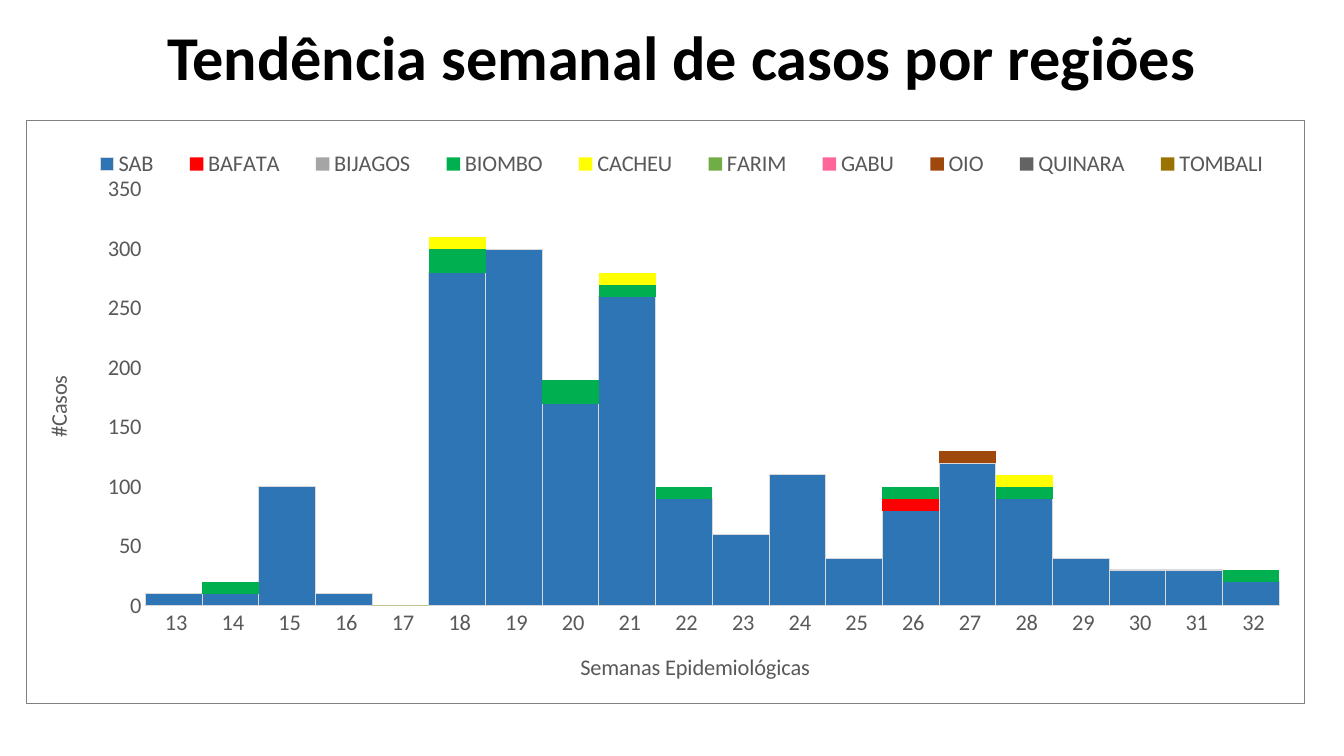
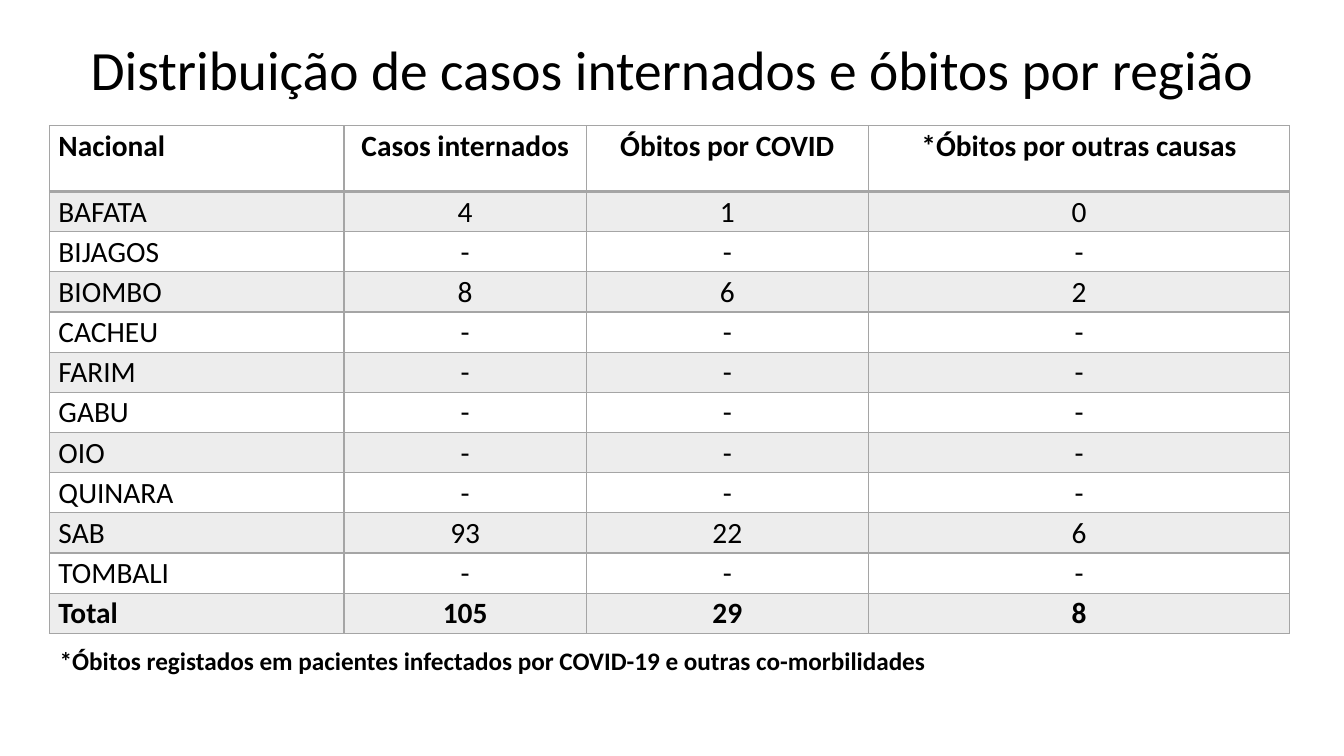
from dataclasses import dataclass

from lxml import etree
from pptx import Presentation
from pptx import util as u
from pptx.chart.data import CategoryChartData
from pptx.dml.color import RGBColor
from pptx.enum import chart as charts, text
from pptx.oxml.ns import qn

Pt = u.Pt


@dataclass(frozen=True)
class Theme:
    font: str = "Calibri"
    ink: str = "000000"
    soft_ink: str = "595959"
    frame: str = "808080"
    axis_line: str = "D9D9D9"
    grid: str = "A5A5A5"
    band: str = "EDEDED"
    chart_size: float = 16
    table_size: float = 21
    note_size: float = 18


THEME = Theme()

# Weekly cases to the nearest ten: region, colour, cases by week
WEEKS = range(13, 33)


def by_week(cases, zero_weeks=()):
    return {**dict.fromkeys(zero_weeks, 0), **cases}


REGIONS = [
    ("SAB", "2E75B6", dict(zip(WEEKS, [
        10, 10, 100, 10, 0, 280, 300, 170, 260, 90,
        60, 110, 40, 80, 120, 90, 40, 30, 30, 20]))),
    ("BAFATA", "FF0000", by_week({26: 10}, (20, 22, 24, 27, 29, 30, 31, 32))),
    ("BIJAGOS", "A5A5A5", {}),
    ("BIOMBO", "00B050", by_week(
        {14: 10, 18: 20, 20: 20, 21: 10, 22: 10, 26: 10, 28: 10, 32: 10},
        (13, 16, 17, 19, 23, 24, 25, 27, 29, 30, 31))),
    ("CACHEU", "FFFF00", by_week(
        {18: 10, 21: 10, 28: 10},
        (17, 20, 22, 23, 24, 27, 29, 30, 31, 32))),
    ("FARIM", "70AD47", by_week({}, (22,))),
    ("GABU", "FF6699", by_week({}, (18, 19, 24, *range(26, 33)))),
    ("OIO", "9E480E", by_week(
        {27: 10}, (17, 23, 24, 25, 26, 28, 29, 30, 31))),
    ("QUINARA", "636363", by_week({}, (18, 28))),
    ("TOMBALI", "997300", by_week({}, (27, 28, 29, 31))),
]

# Admissions and deaths by region
HEADINGS = ["Nacional", "Casos internados", "Óbitos por COVID",
            "*Óbitos por outras causas"]
COUNTS = {"BAFATA": (4, 1, 0), "BIOMBO": (8, 6, 2), "SAB": (93, 22, 6)}
TOTAL = ["Total", 105, 29, 8]


def rgb(colour):
    return RGBColor.from_string(colour)


def set_layout(holder, target=None, **edges):
    """Place a chart part by fractions of the chart frame."""
    layout = holder.find(qn("c:layout"))
    if layout is None:
        layout = etree.Element(qn("c:layout"))
        holder.insert(0 if target else 1, layout)
    manual = etree.SubElement(layout, qn("c:manualLayout"))
    values = {"layoutTarget": target} if target else {}
    values.update(xMode="edge", yMode="edge", **edges)
    for name, value in values.items():
        etree.SubElement(manual, qn("c:" + name)).set("val", str(value))


def add_line(parent, tag, colour, width):
    line = etree.SubElement(parent, qn(tag), w=str(Pt(width)))
    fill = etree.SubElement(line, qn("a:solidFill"))
    etree.SubElement(fill, qn("a:srgbClr"), val=colour)


class Deck:
    def __init__(self, theme):
        self.theme = theme
        self.deck = Presentation()
        self.deck.slide_width, self.deck.slide_height = Pt(960), Pt(540)
        self.page = None

    def style(self, font, size, colour=None, bold=False):
        font.name, font.size, font.bold = self.theme.font, Pt(size), bold
        font.color.rgb = rgb(colour or self.theme.ink)

    def add_page(self, title, box, size, anchor, spacing, bold=False):
        self.page = self.deck.slides.add_slide(self.deck.slide_layouts[5])
        holder = self.page.shapes.title
        holder.left, holder.top, holder.width, holder.height = map(Pt, box)
        frame = holder.text_frame
        frame.text = title
        frame.auto_size = text.MSO_AUTO_SIZE.NONE
        frame.vertical_anchor = anchor
        para = frame.paragraphs[0]
        para.alignment = text.PP_ALIGN.CENTER
        para.line_spacing = spacing
        self.style(para.font, size, bold=bold)

    def add_note(self, note, box):
        frame = self.page.shapes.add_textbox(*map(Pt, box)).text_frame
        frame.word_wrap = True
        frame.text = note
        self.style(frame.paragraphs[0].font, self.theme.note_size, bold=True)

    def add_axis(self, axis, title, x, y):
        axis.has_major_gridlines = False
        axis.major_tick_mark = charts.XL_TICK_MARK.NONE
        self.style(axis.tick_labels.font, self.theme.chart_size,
                   self.theme.soft_ink)
        frame = axis.axis_title.text_frame
        frame.text = title
        self.style(frame.paragraphs[0].font, self.theme.chart_size,
                   self.theme.soft_ink)
        set_layout(axis.axis_title.element, x=x, y=y)

    def add_stacked_columns(self, categories, regions, box):
        theme = self.theme
        data = CategoryChartData()
        data.categories = [f" {name}" for name in categories]
        for name, _, cases in regions:
            data.add_series(name, [cases.get(key) for key in categories])
        chart = self.page.shapes.add_chart(
            charts.XL_CHART_TYPE.COLUMN_STACKED, *map(Pt, box), data).chart
        chart.has_title = False
        self.style(chart.font, theme.chart_size)

        # Frame and plot area
        frame = etree.Element(qn("c:spPr"))
        add_line(frame, "a:ln", theme.frame, 0.75)
        chart.element.find(qn("c:chart")).addnext(frame)
        set_layout(chart.element.find(".//" + qn("c:plotArea")), "inner",
                   x=0.093, y=0.118, w=0.887, h=0.714)

        # Columns
        plot = chart.plots[0]
        plot.gap_width, plot.overlap = 0, 100
        plot.vary_by_categories = False
        for series, (_, colour, _) in zip(plot.series, regions):
            series.format.fill.solid()
            series.format.fill.fore_color.rgb = rgb(colour)
        border = plot.series[0].format.line
        border.color.rgb, border.width = rgb(theme.axis_line), Pt(0.75)

        # Axes
        weeks, cases = chart.category_axis, chart.value_axis
        self.add_axis(weeks, "Semanas Epidemiológicas", 0.43, 0.905)
        self.add_axis(cases, "#Casos", 0.01, 0.43)
        weeks.format.line.color.rgb = rgb(theme.axis_line)
        weeks.format.line.width = Pt(0.75)
        cases.format.line.fill.background()
        cases.minimum_scale, cases.maximum_scale = 0, 350
        cases.major_unit = 50
        body = cases.axis_title.element.find(".//" + qn("a:bodyPr"))
        body.set("rot", "-5400000")
        body.set("vert", "horz")

        # Legend
        chart.has_legend = True
        legend = chart.legend
        legend.position = charts.XL_LEGEND_POSITION.TOP
        legend.include_in_layout = False
        self.style(legend.font, theme.chart_size, theme.soft_ink)
        set_layout(chart.element.find(".//" + qn("c:legend")),
                   x=0.035, y=0.044, w=0.955, h=0.06)

    def add_table(self, rows, left, top, widths, heights):
        table = self.page.shapes.add_table(
            len(rows), len(widths), Pt(left), Pt(top),
            Pt(sum(widths)), Pt(sum(heights))).table
        table.first_row = table.horz_banding = False
        for column, width in zip(table.columns, widths):
            column.width = Pt(width)
        for i, values in enumerate(rows):
            table.rows[i].height = Pt(heights[i])
            for j, value in enumerate(values):
                self.fill_cell(table.cell(i, j), value, i, j,
                               bold=i in (0, len(rows) - 1))

    def fill_cell(self, cell, value, row, column, bold):
        cell.text = str(value)
        cell.margin_left = cell.margin_right = Pt(6.5)
        cell.margin_top = cell.margin_bottom = 0
        para = cell.text_frame.paragraphs[0]
        para.line_spacing = 1.07
        if column:
            para.alignment = text.PP_ALIGN.CENTER
        self.style(para.font, self.theme.table_size, bold=bold)
        # The rule under the heading row is heavier
        widths = {"L": 1, "R": 1, "T": 2.25 if row == 1 else 1,
                  "B": 2.25 if row == 0 else 1}
        for side, width in widths.items():
            add_line(cell._tc.get_or_add_tcPr(), "a:ln" + side,
                     self.theme.grid, width)
        if row % 2:
            cell.fill.solid()
            cell.fill.fore_color.rgb = rgb(self.theme.band)
        else:
            cell.fill.background()


def main():
    report = Deck(THEME)

    # Weekly trend
    report.add_page("Tendência semanal de casos por regiões",
                    (42, 18, 890, 50.5), 44.5, text.MSO_ANCHOR.BOTTOM,
                    0.7, bold=True)
    report.add_stacked_columns(WEEKS, REGIONS, (18.5, 86, 914, 417))

    # Admissions and deaths
    report.add_page("Distribuição de casos internados e óbitos por região",
                    (27.5, 25.5, 905, 52), 39.6, text.MSO_ANCHOR.MIDDLE, 0.9)
    names = sorted(name for name, _, _ in REGIONS)
    body = [[name, *COUNTS.get(name, "---")] for name in names]
    rows = [HEADINGS, *body, TOTAL]
    report.add_table(rows, 35.3, 89.8, (210.5, 173, 201.5, 301),
                     [47] + [28.7] * (len(rows) - 1))
    report.add_note("*Óbitos registados em pacientes infectados por COVID-19 "
                    "e outras co-morbilidades", (35.5, 457.5, 886, 29))

    report.deck.save("out.pptx")


if __name__ == "__main__":
    main()
